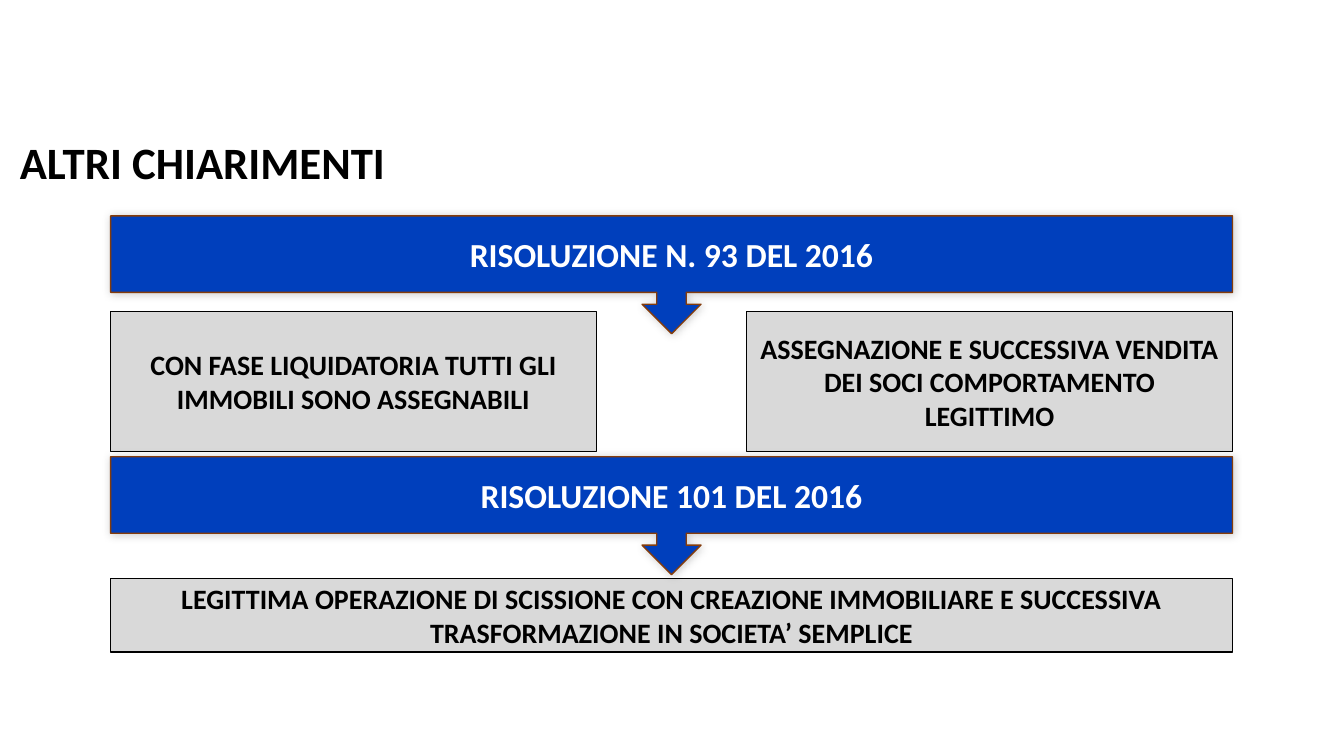
import pptx
import pptx.util
import pptx.dml.color
import pptx.enum.shapes
import pptx.enum.text
import pptx.oxml
import pptx.oxml.ns

Cm = pptx.util.Cm
Pt = pptx.util.Pt
RGBColor = pptx.dml.color.RGBColor
Kind = pptx.enum.shapes.MSO_SHAPE
Align = pptx.enum.text.PP_ALIGN
Anchor = pptx.enum.text.MSO_ANCHOR

BLACK = RGBColor(0x00, 0x00, 0x00)
WHITE = RGBColor(0xFF, 0xFF, 0xFF)
GREY = RGBColor(0xD9, 0xD9, 0xD9)
BLUE = RGBColor(0x00, 0x3F, 0xBC)
BROWN = RGBColor(0x84, 0x3C, 0x0B)

LEFT = 2.79
WIDTH = 28.27
HALF = 12.24

SHADOW = (
    f'<a:effectLst {pptx.oxml.ns.nsdecls("a")}>'
    '<a:outerShdw blurRad="76200" dist="0" dir="13500000" rotWithShape="0">'
    '<a:srgbClr val="000000"><a:alpha val="20000"/></a:srgbClr>'
    '</a:outerShdw></a:effectLst>'
)


def write(frame, text, size, color, align):
    frame.word_wrap = True
    frame.vertical_anchor = Anchor.MIDDLE
    line = frame.paragraphs[0]
    line.text = text
    line.alignment = align
    font = line.font
    font.name = "Calibri"
    font.size = Pt(size)
    font.bold = True
    font.color.rgb = color


def add_block(slide, kind, place, fill, edge):
    block = slide.shapes.add_shape(kind, *map(Cm, place))
    block.shadow.inherit = False
    block.fill.solid()
    block.fill.fore_color.rgb = fill
    block.line.color.rgb = edge
    block.line.width = Pt(1)
    return block


def add_box(slide, text, *place):
    box = add_block(slide, Kind.RECTANGLE, place, GREY, BLACK)
    write(box.text_frame, text, 20, BLACK, Align.CENTER)


def add_banner(slide, text, top):
    place = (LEFT, top, WIDTH, 2.97)
    banner = add_block(slide, Kind.DOWN_ARROW_CALLOUT, place, BLUE, BROWN)
    props = banner.element.spPr
    props.remove(props.find(pptx.oxml.ns.qn("a:effectLst")))
    props.append(pptx.oxml.parse_xml(SHADOW))
    write(banner.text_frame, text, 24, WHITE, Align.CENTER)


def set_title(slide, text):
    title = slide.shapes.title
    title.left, title.top = Cm(0), Cm(3.4)
    title.width, title.height = Cm(33.87), Cm(1.52)
    frame = title.text_frame
    frame.auto_size = pptx.enum.text.MSO_AUTO_SIZE.NONE
    write(frame, text, 32, BLACK, Align.LEFT)
    frame.margin_left = Cm(0.5)
    frame.paragraphs[0].line_spacing = 0.9


def main():
    deck = pptx.Presentation()
    deck.slide_width, deck.slide_height = Cm(33.87), Cm(19.05)
    slide = deck.slides.add_slide(deck.slide_layouts[5])
    set_title(slide, "ALTRI CHIARIMENTI")
    add_box(slide, "CON FASE LIQUIDATORIA TUTTI GLI IMMOBILI SONO ASSEGNABILI",
            LEFT, 7.85, HALF, 3.53)
    add_box(slide, "ASSEGNAZIONE E SUCCESSIVA VENDITA DEI SOCI COMPORTAMENTO LEGITTIMO",
            LEFT + WIDTH - HALF, 7.85, HALF, 3.53)
    add_box(slide, "LEGITTIMA OPERAZIONE DI SCISSIONE CON CREAZIONE IMMOBILIARE "
            "E SUCCESSIVA TRASFORMAZIONE IN SOCIETA’ SEMPLICE",
            LEFT, 14.58, WIDTH, 1.85)
    add_banner(slide, "RISOLUZIONE N. 93 DEL 2016", 5.44)
    add_banner(slide, "RISOLUZIONE 101 DEL 2016", 11.51)
    deck.save("out.pptx")


if __name__ == "__main__":
    main()
